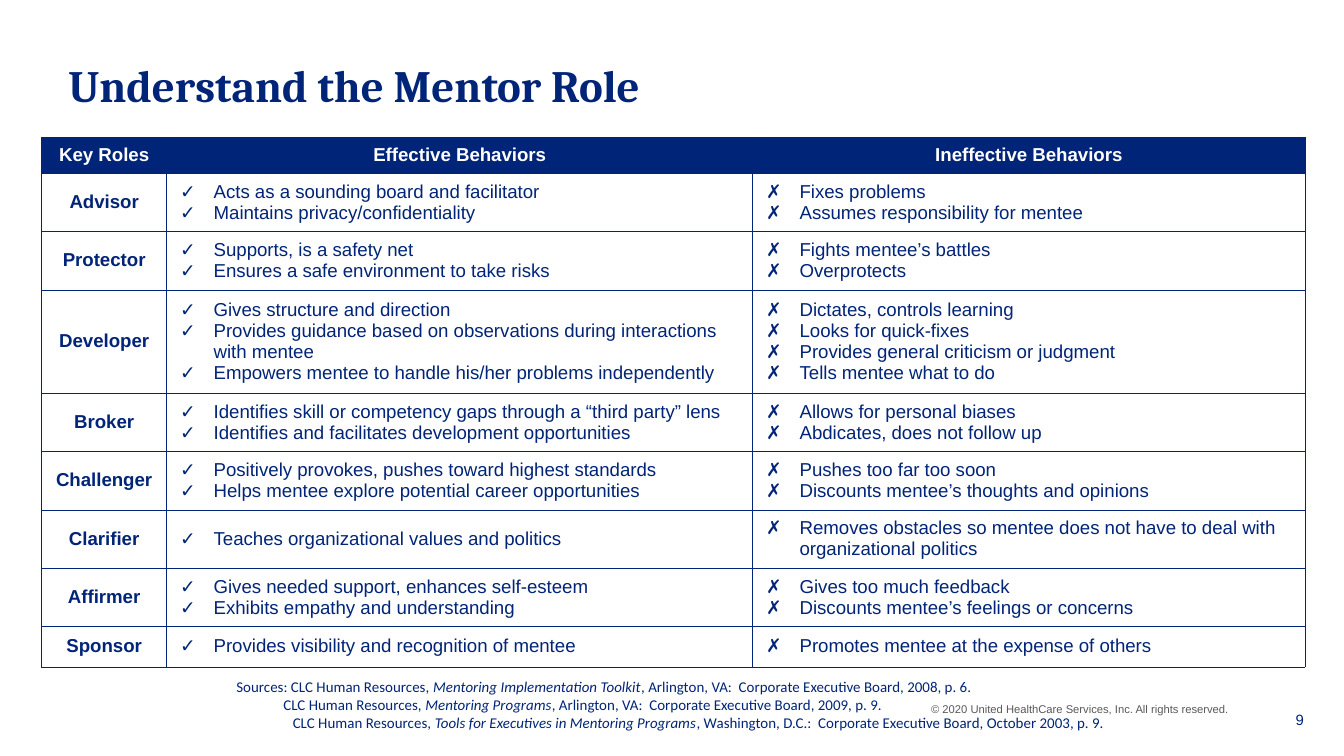
from dataclasses import dataclass

from lxml.etree import SubElement
from pptx import Presentation
from pptx.dml.color import RGBColor
from pptx.enum.text import MSO_ANCHOR as Anchor, PP_ALIGN as Align
from pptx.oxml.ns import qn
from pptx.util import Inches, Pt


@dataclass(frozen=True)
class Theme:
    navy: str = "002477"
    white: str = "FFFFFF"
    grey: str = "595959"
    title_font: str = "Cambria"
    body_font: str = "Arial"
    source_font: str = "Calibri"
    title_size: int = 24
    table_size: int = 10
    small_size: int = 8
    legal_size: int = 6
    border_width: float = 0.25


HEADERS = ["Key Roles", "Effective Behaviors", "Ineffective Behaviors"]
COLUMN_WIDTHS = [0.93, 4.36, 4.11]
HEADER_HEIGHT = 0.21
MARKS = ["✓", "✗"]

# Role, row height, effective behaviors, ineffective behaviors
ROLES = [
    ("Advisor", 0.41,
     ["Acts as a sounding board and facilitator", "Maintains privacy/confidentiality"],
     ["Fixes problems", "Assumes responsibility for mentee"]),
    ("Protector", 0.41,
     ["Supports, is a safety net", "Ensures a safe environment to take risks"],
     ["Fights mentee’s battles", "Overprotects"]),
    ("Developer", 0.72,
     ["Gives structure and direction",
      "Provides guidance based on observations during interactions with mentee",
      "Empowers mentee to handle his/her problems independently"],
     ["Dictates, controls learning", "Looks for quick-fixes",
      "Provides general criticism or judgment", "Tells mentee what to do"]),
    ("Broker", 0.41,
     ["Identifies skill or competency gaps through a “third party” lens",
      "Identifies and facilitates development opportunities"],
     ["Allows for personal biases", "Abdicates, does not follow up"]),
    ("Challenger", 0.41,
     ["Positively provokes, pushes toward highest standards",
      "Helps mentee explore potential career opportunities"],
     ["Pushes too far too soon", "Discounts mentee’s thoughts and opinions"]),
    ("Clarifier", 0.41,
     ["Teaches organizational values and politics"],
     ["Removes obstacles so mentee does not have to deal with organizational politics"]),
    ("Affirmer", 0.41,
     ["Gives needed support, enhances self-esteem", "Exhibits empathy and understanding"],
     ["Gives too much feedback", "Discounts mentee’s feelings or concerns"]),
    ("Sponsor", 0.3,
     ["Provides visibility and recognition of mentee"],
     ["Promotes mentee at the expense of others"]),
]

# Left indent, lead-in, work in italics, publication details
SOURCES = [
    (0, "Sources: CLC Human Resources, ", "Mentoring Implementation Toolkit",
     ", Arlington, VA:  Corporate Executive Board, 2008, p. 6."),
    (0.35, "CLC Human Resources, ", "Mentoring Programs",
     ", Arlington, VA:  Corporate Executive Board, 2009, p. 9."),
    (0.42, "CLC Human Resources, ", "Tools for Executives in Mentoring Programs",
     ", Washington, D.C.:  Corporate Executive Board, October 2003, p. 9."),
]


class SlideBuilder:
    def __init__(self, slide, theme):
        self.slide = slide
        self.theme = theme

    def run(self, paragraph, text, size, color=None, font=None, bold=False, italic=False):
        run = paragraph.add_run()
        run.text = text
        run.font.name = font or self.theme.body_font
        run.font.size = Pt(size)
        run.font.bold = bold
        run.font.italic = italic
        run.font.color.rgb = RGBColor.from_string(color or self.theme.navy)

    def indent(self, paragraph, left, first_line=0):
        properties = paragraph._p.get_or_add_pPr()
        properties.set("marL", str(Inches(left)))
        properties.set("indent", str(Inches(first_line)))
        return properties

    def text_frame(self, left, top, width, height, anchor=Anchor.TOP):
        box = self.slide.shapes.add_textbox(
            Inches(left), Inches(top), Inches(width), Inches(height))
        frame = box.text_frame
        frame.word_wrap = True
        frame.vertical_anchor = anchor
        return frame

    def label(self, bounds, text, size, align=Align.LEFT, anchor=Anchor.TOP, **style):
        paragraph = self.text_frame(*bounds, anchor).paragraphs[0]
        paragraph.alignment = align
        self.run(paragraph, text, size, **style)

    def citations(self, bounds, sources):
        frame = self.text_frame(*bounds)
        frame.margin_top = frame.margin_bottom = 0
        for index, (left, lead, work, details) in enumerate(sources):
            paragraph = frame.add_paragraph() if index else frame.paragraphs[0]
            self.indent(paragraph, left)
            for text, italic in ((lead, False), (work, True), (details, False)):
                self.run(paragraph, text, self.theme.small_size,
                         font=self.theme.source_font, italic=italic)

    def format_cell(self, cell, fill=None):
        cell.vertical_anchor = Anchor.MIDDLE
        properties = cell._tc.get_or_add_tcPr()
        for side in ("lnL", "lnR", "lnT", "lnB"):
            line = SubElement(properties, qn(f"a:{side}"),
                              w=str(Pt(self.theme.border_width)))
            solid = SubElement(line, qn("a:solidFill"))
            SubElement(solid, qn("a:srgbClr"), val=self.theme.navy)
        if fill:
            cell.fill.solid()
            cell.fill.fore_color.rgb = RGBColor.from_string(fill)
        else:
            cell.fill.background()

    def heading_cell(self, cell, text, color, fill=None):
        self.format_cell(cell, fill)
        paragraph = cell.text_frame.paragraphs[0]
        paragraph.alignment = Align.CENTER
        self.run(paragraph, text, self.theme.table_size, color, bold=True)

    def bullet_cell(self, cell, mark, items):
        self.format_cell(cell)
        frame = cell.text_frame
        for index, item in enumerate(items):
            paragraph = frame.add_paragraph() if index else frame.paragraphs[0]
            properties = self.indent(paragraph, 0.25, -0.25)
            SubElement(properties, qn("a:buFont"), typeface=self.theme.body_font)
            SubElement(properties, qn("a:buChar"), char=mark)
            self.run(paragraph, item, self.theme.table_size)

    def role_table(self, left, top):
        heights = [HEADER_HEIGHT] + [role[1] for role in ROLES]
        table = self.slide.shapes.add_table(
            len(heights), len(HEADERS), Inches(left), Inches(top),
            Inches(sum(COLUMN_WIDTHS)), Inches(sum(heights))).table
        table.horz_banding = False
        for column, width in zip(table.columns, COLUMN_WIDTHS):
            column.width = Inches(width)
        for row, height in zip(table.rows, heights):
            row.height = Inches(height)
        for column, header in enumerate(HEADERS):
            self.heading_cell(table.cell(0, column), header,
                              self.theme.white, self.theme.navy)
        for row, (role, _, *behaviors) in enumerate(ROLES, 1):
            self.heading_cell(table.cell(row, 0), role, self.theme.navy)
            for column, (mark, items) in enumerate(zip(MARKS, behaviors), 1):
                self.bullet_cell(table.cell(row, column), mark, items)


def main():
    presentation = Presentation()
    # Widescreen, 16 to 9
    presentation.slide_width = Inches(10)
    presentation.slide_height = Inches(10 * 9 / 16)
    theme = Theme()
    slide = presentation.slides.add_slide(presentation.slide_layouts[6])
    builder = SlideBuilder(slide, theme)

    # Copyright line, title and page number
    builder.label((6.83, 5.18, 2.58, 0.2),
                  "© 2020 United HealthCare Services, Inc. All rights reserved.",
                  theme.legal_size, color=theme.grey)
    builder.label((0.41, 0.38, 9.1, 0.6), "Understand the Mentor Role",
                  theme.title_size, font=theme.title_font, bold=True)
    builder.label((9.41, 5.2, 0.39, 0.31), "9", theme.small_size,
                  Align.RIGHT, Anchor.MIDDLE)

    # Mentor roles and their sources
    builder.role_table(0.31, 1.02)
    builder.citations((1.66, 5.04, 7.62, 0.4), SOURCES)

    presentation.save("out.pptx")


if __name__ == "__main__":
    main()
